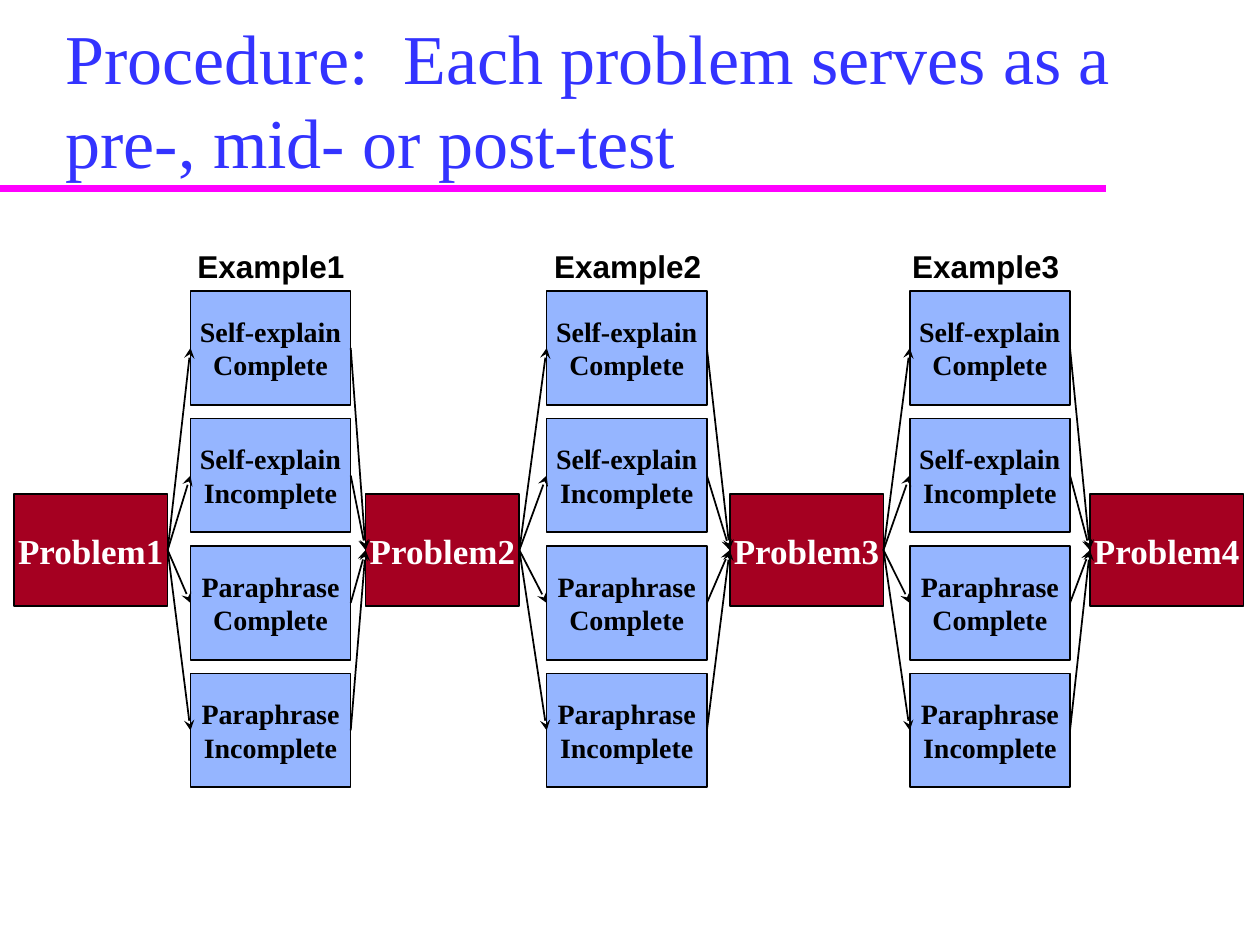
import pptx
import pptx.util
import pptx.dml.color
import pptx.enum.shapes
import pptx.enum.text
import pptx.oxml.ns
import lxml.etree

Cm = pptx.util.Cm
Pt = pptx.util.Pt
SERIF, SANS = "Times New Roman", "Arial"
COLORS = {
    "title": "3333FF",
    "rule": "FF00FF",
    "problem": "A50021",
    "option": "95B5FF",
    "ink": "000000",
    "paper": "FFFFFF",
}
OPTIONS = [
    ("Self-explain", "Complete"),
    ("Self-explain", "Incomplete"),
    ("Paraphrase", "Complete"),
    ("Paraphrase", "Incomplete"),
]
PROBLEM_LEFTS = [0.28, 7.37, 14.71, 21.97]
EXAMPLE_LEFTS = [(3.84, 3.73), (11.02, 10.92), (18.34, 18.14)]
PROBLEM_TOP, PROBLEM_W, PROBLEM_H = 9.96, 3.1, 2.26
OPTION_TOP, OPTION_W, OPTION_H, OPTION_PITCH = 5.87, 3.23, 2.29, 2.57
LABEL_TOP, LABEL_W, LABEL_H = 4.85, 3.48, 1.02


def rgb(name):
    return pptx.dml.color.RGBColor.from_string(COLORS[name])


def add_run(p, text, size, font, color, bold=True):
    r = p.add_run()
    r.text = text
    r.font.size = Pt(size)
    r.font.name = font
    r.font.bold = bold
    r.font.color.rgb = rgb(color)


def add_box(shapes, left, top, width, height, lines, fill, size, color):
    sp = shapes.add_shape(pptx.enum.shapes.MSO_SHAPE.RECTANGLE,
                          Cm(left), Cm(top), Cm(width), Cm(height))
    sp.shadow.inherit = False
    sp.fill.solid()
    sp.fill.fore_color.rgb = rgb(fill)
    sp.line.color.rgb = rgb("ink")
    sp.line.width = Pt(1)
    tf = sp.text_frame
    tf.word_wrap = False
    tf.vertical_anchor = pptx.enum.text.MSO_ANCHOR.MIDDLE
    for i, line in enumerate(lines):
        p = tf.add_paragraph() if i else tf.paragraphs[0]
        p.alignment = pptx.enum.text.PP_ALIGN.CENTER
        add_run(p, line, size, SERIF, color)
    return sp


def add_line(shapes, x1, y1, x2, y2, color, width):
    cxn = shapes.add_connector(pptx.enum.shapes.MSO_CONNECTOR.STRAIGHT, x1, y1, x2, y2)
    cxn.line.color.rgb = rgb(color)
    cxn.line.width = Pt(width)
    lxml.etree.SubElement(cxn.element.spPr, pptx.oxml.ns.qn("a:effectLst"))
    return cxn


def add_arrow(shapes, source, target):
    cxn = add_line(shapes, source.left + source.width, source.top + source.height // 2,
                   target.left, target.top + target.height // 2, "ink", 1)
    cxn.begin_connect(source, 3)
    cxn.end_connect(target, 1)
    ln = cxn.line._get_or_add_ln()
    lxml.etree.SubElement(ln, pptx.oxml.ns.qn("a:tailEnd"), type="stealth")


def add_title(s, left, top, width, height):
    add_line(s.shapes, 0, Cm(top + height), Cm(22.3), Cm(top + height), "rule", 4)
    title = s.shapes.title
    title.left, title.top, title.width, title.height = map(Cm, (left, top, width, height))
    tf = title.text_frame
    tf.word_wrap = True
    tf.auto_size = pptx.enum.text.MSO_AUTO_SIZE.NONE
    tf.vertical_anchor = pptx.enum.text.MSO_ANCHOR.BOTTOM
    p = tf.paragraphs[0]
    p.alignment = pptx.enum.text.PP_ALIGN.LEFT
    add_run(p, "Procedure:  Each problem serves as a pre-, mid- or post-test",
            40, SERIF, "title", bold=False)


def add_problem(s, left, number):
    return add_box(s.shapes, left, PROBLEM_TOP, PROBLEM_W, PROBLEM_H,
                   [f"Problem{number}"], "problem", 20, "paper")


def add_example(s, left, label_left, number, before, after):
    shapes = s.shapes.add_group_shape().shapes
    boxes = [add_box(shapes, left, OPTION_TOP + i * OPTION_PITCH, OPTION_W, OPTION_H,
                     lines, "option", 16, "ink")
             for i, lines in enumerate(OPTIONS)]
    for box in boxes:
        add_arrow(shapes, before, box)
    for box in boxes:
        add_arrow(shapes, box, after)
    label = shapes.add_textbox(Cm(label_left), Cm(LABEL_TOP), Cm(LABEL_W), Cm(LABEL_H))
    tf = label.text_frame
    tf.word_wrap = False
    tf.auto_size = pptx.enum.text.MSO_AUTO_SIZE.SHAPE_TO_FIT_TEXT
    add_run(tf.paragraphs[0], f"Example{number}", 18, SANS, "ink")


def main():
    prs = pptx.Presentation()
    prs.slide_width, prs.slide_height = Cm(25.4), Cm(19.05)
    s = prs.slides.add_slide(prs.slide_layouts[5])
    s.background.fill.solid()
    s.background.fill.fore_color.rgb = rgb("paper")
    add_title(s, 1.07, 0.74, 21.6, 3.07)
    problems = [add_problem(s, left, n) for n, left in enumerate(PROBLEM_LEFTS, 1)]
    for i, (left, label_left) in enumerate(EXAMPLE_LEFTS):
        add_example(s, left, label_left, i + 1, problems[i], problems[i + 1])
    prs.save("out.pptx")


if __name__ == "__main__":
    main()
